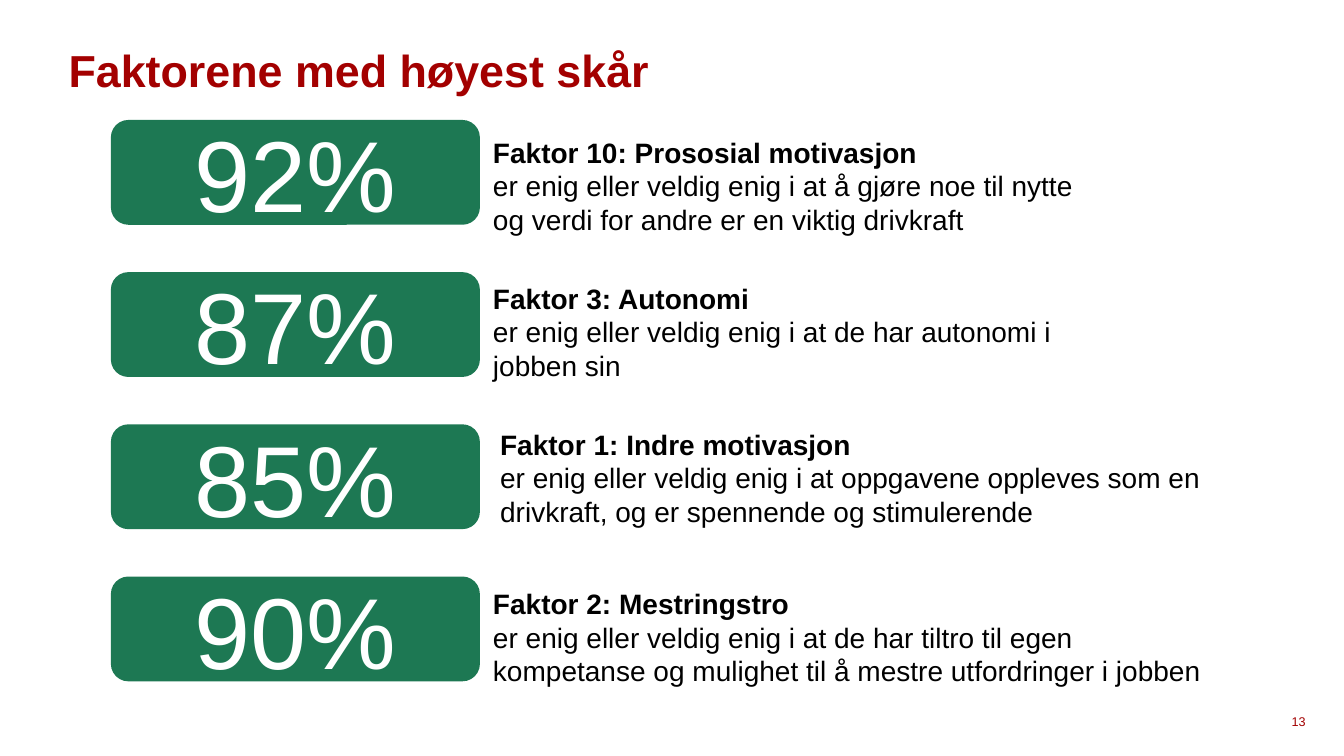
from dataclasses import dataclass

from lxml.etree import SubElement
from pptx import Presentation
from pptx.dml.color import RGBColor as Rgb
from pptx.enum.shapes import MSO_SHAPE as Preset
from pptx.enum.text import MSO_ANCHOR as Anchor, MSO_AUTO_SIZE as AutoSize, PP_ALIGN as Align
from pptx.oxml.ns import qn
from pptx.util import Inches, Pt


@dataclass(frozen=True)
class Theme:
    font: str = "Arial"
    red: str = "A30000"
    green: str = "1D7853"
    black: str = "000000"
    white: str = "FFFFFF"
    title_size: int = 32
    score_size: int = 72
    body_size: int = 20
    number_size: int = 9


class FactorSlide:
    def __init__(self, deck, theme):
        self.deck = deck
        self.theme = theme
        self.slide = deck.slides.add_slide(deck.slide_layouts.get_by_name("Comparison"))

    def area(self, left, top, width, height):
        across, down = self.deck.slide_width, self.deck.slide_height
        return (int(across * left / 100), int(down * top / 100),
                int(across * width / 100), int(down * height / 100))

    def place(self, holder, area):
        holder.left, holder.top, holder.width, holder.height = self.area(*area)
        return holder

    def frame(self, shape, anchor):
        frame = shape.text_frame
        frame.margin_left = frame.margin_right = frame.margin_top = frame.margin_bottom = 0
        frame.word_wrap = True
        frame.auto_size = AutoSize.NONE
        frame.vertical_anchor = anchor
        return frame.paragraphs[0]

    def style(self, paragraph, size, color, align=Align.LEFT, bold=None):
        paragraph.alignment = align
        paragraph.space_before = Pt(0)
        font = paragraph.font
        font.name, font.size, font.bold = self.theme.font, Pt(size), bold
        font.color.rgb = Rgb.from_string(color)

    def title(self, text, area):
        heading = self.frame(self.place(self.slide.shapes.title, area), Anchor.MIDDLE)
        heading.text = text
        heading.line_spacing = 0.9
        self.style(heading, self.theme.title_size, self.theme.red, bold=True)

    def score(self, text, area):
        badge = self.slide.shapes.add_shape(Preset.ROUNDED_RECTANGLE, *self.area(*area))
        badge.shadow.inherit = False
        badge.fill.solid()
        badge.fill.fore_color.rgb = Rgb.from_string(self.theme.green)
        badge.line.fill.background()
        badge.text_frame.vertical_anchor = Anchor.MIDDLE
        percent = badge.text_frame.paragraphs[0]
        percent.text = text
        self.style(percent, self.theme.score_size, self.theme.white, Align.CENTER)

    def factor(self, index, name, finding, area):
        holder = self.place(self.slide.placeholders[index], area)
        statement = self.frame(holder, Anchor.TOP)
        properties = statement._p.get_or_add_pPr()
        properties.set("marL", "0")
        properties.set("indent", "0")
        SubElement(properties, qn("a:buNone"))
        statement.space_after = Pt(3)
        self.style(statement, self.theme.body_size, self.theme.black)
        lead = statement.add_run()
        lead.text = name
        lead.font.bold = True
        statement.add_line_break()
        detail = statement.add_run()
        detail.text = finding
        detail.font.bold = False

    def number(self, text, area):
        page = self.frame(self.slide.shapes.add_textbox(*self.area(*area)), Anchor.MIDDLE)
        page.text = text
        self.style(page, self.theme.number_size, self.theme.red)


FACTORS = [
    ("92%", "Faktor 10: Prososial motivasjon",
     "er enig eller veldig enig i at å gjøre noe til nytte og verdi for andre er en viktig drivkraft",
     36.68, 17.87, 44.86),
    ("87%", "Faktor 3: Autonomi",
     "er enig eller veldig enig i at de har autonomi i jobben sin",
     36.68, 37.2, 44.86),
    ("85%", "Faktor 1: Indre motivasjon",
     "er enig eller veldig enig i at oppgavene oppleves som en drivkraft, og er spennende og stimulerende",
     37.21, 56.53, 55.81),
    ("90%", "Faktor 2: Mestringstro",
     "er enig eller veldig enig i at de har tiltro til egen kompetanse og mulighet til å mestre "
     "utfordringer i jobben",
     36.68, 77.6, 52.89),
]
FIRST_ROW, ROW_PITCH = 15.87, 20.13


def main():
    deck = Presentation()
    deck.slide_width, deck.slide_height = Inches(13.33), Inches(7.5)
    page = FactorSlide(deck, Theme())
    page.title("Faktorene med høyest skår", (5.1, 3.33, 89.8, 12.53))
    for row, (percent, name, finding, left, top, width) in enumerate(FACTORS):
        page.score(percent, (8.25, FIRST_ROW + row * ROW_PITCH, 27.46, 13.87))
        page.factor(row + 1, name, finding, (left, top, width, 9.87))
    page.number("13", (96.1, 93.87, 2.85, 3.07))
    deck.save("out.pptx")


if __name__ == "__main__":
    main()
